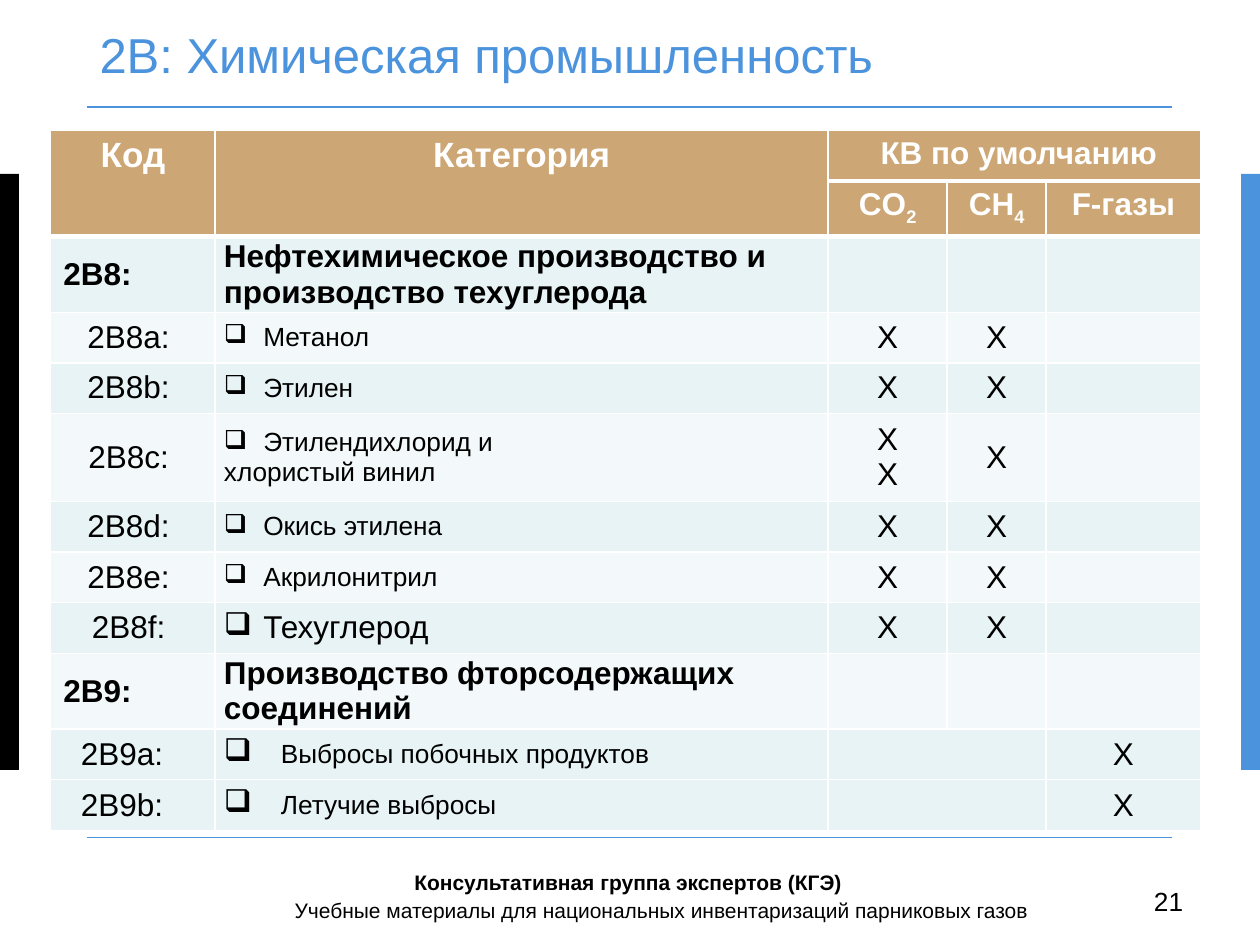
from dataclasses import dataclass

from lxml.etree import SubElement
from pptx import Presentation
from pptx.dml.color import RGBColor
from pptx.enum.shapes import MSO_CONNECTOR, MSO_SHAPE
from pptx.enum.text import MSO_ANCHOR, PP_ALIGN
from pptx.oxml.ns import qn
from pptx.util import Pt

FONT = "Arial"
BLUE = RGBColor(0x4B, 0x93, 0xDC)
BLACK = RGBColor(0, 0, 0)
WHITE = RGBColor(0xFF, 0xFF, 0xFF)
TAN = RGBColor(0xCC, 0xA6, 0x74)
MINT = RGBColor(0xE7, 0xF3, 0xF4)
PALE = RGBColor(0xF3, 0xF9, 0xFA)

COL_WIDTHS = [94, 350.3, 68, 56.6, 88.3]
ROW_HEIGHTS = [29.3, 30, 40.3, 28.5, 27.4, 47.7, 28.9, 27.7, 29.1, 40.6, 28.9, 29.1]
HEADER_ROWS = 2
THICK_EDGES = (1, 2)  # horizontal grid lines under the header rows


@dataclass
class Label:
    text: str
    left: float
    top: float
    width: float
    height: float
    size: float
    bold: bool = False


@dataclass
class Category:
    code: str
    name: str
    fill: RGBColor
    marks: tuple = ("", "", "")
    size: float = 15
    level: str = "item"  # "group", "item" or "subitem"


CATEGORIES = [
    Category("2B8:", "Нефтехимическое производство и производство техуглерода",
             MINT, size=18, level="group"),
    Category("2B8a: ", "Метанол", PALE, ("X", "X", "")),
    Category("2B8b: ", "Этилен", MINT, ("X", "X", "")),
    Category("2B8c: ", "Этилендихлорид и\nхлористый винил", PALE, ("X\nX", "X", "")),
    Category("2B8d: ", "Окись этилена", MINT, ("X", "X", "")),
    Category("2B8e: ", "Акрилонитрил", PALE, ("X", "X", "")),
    Category("2B8f: ", "Техуглерод", MINT, ("X", "X", ""), size=18),
    Category("2B9:", "Производство фторсодержащих соединений",
             PALE, size=18, level="group"),
    Category("2B9a:", "Выбросы побочных продуктов", MINT, ("", "", "X"), level="subitem"),
    Category("2B9b:", "Летучие выбросы", MINT, ("", "", "X"), level="subitem"),
]

FOOTERS = [
    Label("21", 652.3, 502.5, 34, 25, 15),
    Label("Учебные материалы для национальных инвентаризаций парниковых газов",
          161.3, 512, 435, 4.3, 12),
    Label("Консультативная группа экспертов (КГЭ)", 229.7, 493.2, 272, 19.4, 12, True),
]


def set_font(p, size: float, color: RGBColor, bold: bool = False) -> None:
    p.font.name, p.font.size, p.font.bold = FONT, Pt(size), bold
    p.font.color.rgb = color


def add_bar(s, left: float, color: RGBColor) -> None:
    sp = s.shapes.add_shape(MSO_SHAPE.RECTANGLE, Pt(left), Pt(99.4), Pt(10.8), Pt(340.6))
    sp.shadow.inherit = False
    sp.fill.solid()
    sp.fill.fore_color.rgb = color
    sp.line.fill.background()


def add_rule(s, y: float) -> None:
    line = s.shapes.add_connector(MSO_CONNECTOR.STRAIGHT, Pt(49.7), Pt(y), Pt(669.6), Pt(y))
    line.line.color.rgb = BLUE
    line.line.width = Pt(1)
    SubElement(line._element.spPr, qn("a:effectLst"))


def add_label(s, label: Label, color: RGBColor = BLACK):
    sp = s.shapes.add_textbox(Pt(label.left), Pt(label.top), Pt(label.width), Pt(label.height))
    tf = sp.text_frame
    tf.word_wrap = True
    p = tf.paragraphs[0]
    p.text = label.text
    set_font(p, label.size, color, label.bold)
    return tf


def style_cell(cell, row: int, fill: RGBColor) -> None:
    """White borders, then the fill, as the schema orders them."""
    edges = {"a:lnL": 1, "a:lnR": 1,
             "a:lnT": 3 if row in THICK_EDGES else 1,
             "a:lnB": 3 if row + 1 in THICK_EDGES else 1}
    tc_pr = cell._tc.get_or_add_tcPr()
    for tag, width in edges.items():
        ln = SubElement(tc_pr, qn(tag), w=str(Pt(width)))
        SubElement(SubElement(ln, qn("a:solidFill")), qn("a:srgbClr"), val=str(WHITE))
    cell.fill.solid()
    cell.fill.fore_color.rgb = fill


def set_indent(p, left: float, first: float = 0) -> None:
    p_pr = p._p.get_or_add_pPr()
    p_pr.set("marL", str(Pt(left)))
    p_pr.set("indent", str(Pt(first)))


def add_bullet(p, indent: float, percent: int) -> None:
    set_indent(p, indent, -indent)
    p_pr = p._p.get_or_add_pPr()
    SubElement(p_pr, qn("a:buSzPct"), val=str(percent * 1000))
    SubElement(p_pr, qn("a:buChar"), char="❑")


def fill_header(cell, text: str, size: float, subscript: str = "") -> None:
    p = cell.text_frame.paragraphs[0]
    p.alignment = PP_ALIGN.CENTER
    p.add_run().text = text
    if subscript:
        r = p.add_run()
        r.text = subscript
        r._r.get_or_add_rPr().set("baseline", "-25000")
    set_font(p, size, WHITE, True)


def fill_body(cell, text: str, size: float, bold: bool, align=None, bullet=None) -> None:
    cell.vertical_anchor = MSO_ANCHOR.MIDDLE
    cell.text = text
    for i, p in enumerate(cell.text_frame.paragraphs):
        p.alignment = align
        if bullet and i == 0:
            add_bullet(p, *bullet)
        set_font(p, size, BLACK, bold)


def fill_category(cells: list, category: Category) -> None:
    group, sub = category.level == "group", category.level == "subitem"
    bullet = {"group": None, "item": (22.5, 100), "subitem": (32.5, 120)}[category.level]
    centred = PP_ALIGN.CENTER if category.level == "item" else None
    fill_body(cells[0], category.code, 18, group, centred)
    if sub:
        set_indent(cells[0].text_frame.paragraphs[0], 10)
    name = cells[1]
    name.margin_left = name.margin_right = Pt(5)
    name.margin_top = name.margin_bottom = 0
    fill_body(name, category.name, category.size, group, bullet=bullet)
    for cell, mark in zip(cells[2:], category.marks):
        fill_body(cell, mark, 18, False, PP_ALIGN.CENTER)


def add_category_table(s) -> None:
    table = s.shapes.add_table(len(ROW_HEIGHTS), len(COL_WIDTHS), Pt(29), Pt(74.2),
                               Pt(sum(COL_WIDTHS)), Pt(sum(ROW_HEIGHTS))).table
    table.first_row = table.horz_banding = False
    for column, width in zip(table.columns, COL_WIDTHS):
        column.width = Pt(width)
    fills = [TAN] * HEADER_ROWS + [c.fill for c in CATEGORIES]
    for i, (row, height, fill) in enumerate(zip(table.rows, ROW_HEIGHTS, fills)):
        row.height = Pt(height)
        for cell in row.cells:
            style_cell(cell, i, fill)

    # Header
    for col, text in enumerate(("Код", "Категория")):
        table.cell(0, col).merge(table.cell(1, col))
        fill_header(table.cell(0, col), text, 20)
    table.cell(0, 2).merge(table.cell(0, 4))
    fill_header(table.cell(0, 2), " КВ по умолчанию", 18)
    for col, (gas, subscript) in enumerate((("CO", "2"), ("CH", "4"), ("F-газы", "")), 2):
        fill_header(table.cell(1, col), gas, 18, subscript)

    # Categories
    for i, category in enumerate(CATEGORIES, HEADER_ROWS):
        fill_category(list(table.rows[i].cells), category)
        if category.level == "subitem":
            table.cell(i, 2).merge(table.cell(i, 3))


def main() -> None:
    prs = Presentation()
    prs.slide_width, prs.slide_height = Pt(720), Pt(540)
    s = prs.slides.add_slide(prs.slide_layouts[6])

    # Side bars and rules
    add_bar(s, 0, BLACK)
    add_bar(s, 709.2, BLUE)
    for y in (61.2, 478.6):
        add_rule(s, y)

    # Title
    tf = add_label(s, Label("2B: Химическая промышленность", 56.9, 20.2, 623.5, 39.6, 28), BLUE)
    tf.margin_left = tf.margin_right = tf.margin_top = tf.margin_bottom = 0
    tf.vertical_anchor = MSO_ANCHOR.MIDDLE
    tf.paragraphs[0].line_spacing = Pt(15)

    add_category_table(s)

    # Footer
    for label in FOOTERS:
        add_label(s, label)

    prs.save("out.pptx")


if __name__ == "__main__":
    main()
